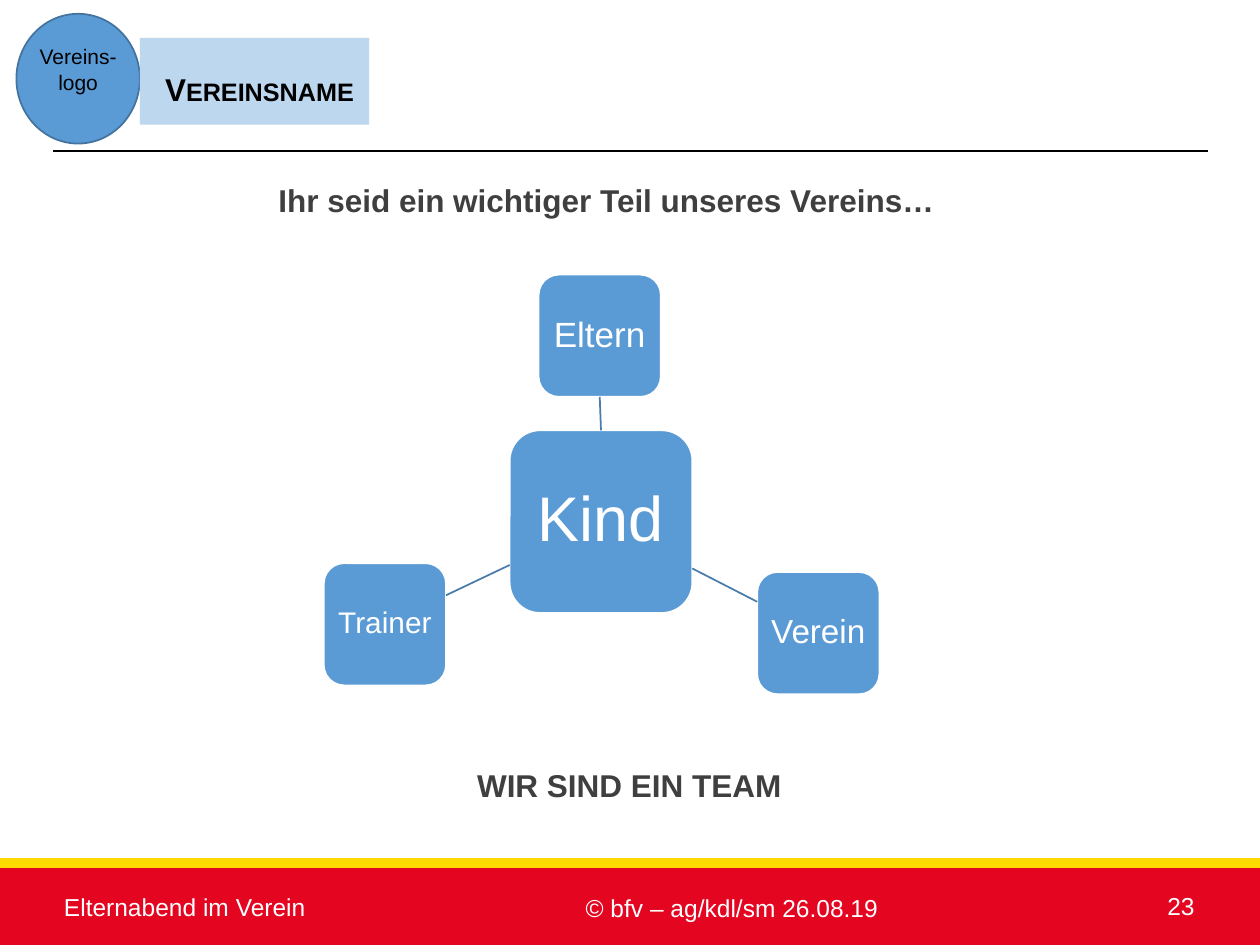
from lxml import etree
from pptx import Presentation
from pptx.dml.color import RGBColor
from pptx.enum.shapes import MSO_CONNECTOR, MSO_SHAPE
from pptx.enum.text import MSO_ANCHOR, PP_ALIGN
from pptx.oxml.ns import qn
from pptx.util import Inches, Pt

LEFT, CENTER, RIGHT = PP_ALIGN.LEFT, PP_ALIGN.CENTER, PP_ALIGN.RIGHT
TOP, MIDDLE = MSO_ANCHOR.TOP, MSO_ANCHOR.MIDDLE
RECTANGLE, ROUNDED, OVAL = MSO_SHAPE.RECTANGLE, MSO_SHAPE.ROUNDED_RECTANGLE, MSO_SHAPE.OVAL
STRAIGHT = MSO_CONNECTOR.STRAIGHT
FONT = "Arial"
COLORS = {
    "blue": "5B9BD5",
    "blue_edge": "43739E",
    "spoke": "497CAB",
    "light_blue": "BDD7EE",
    "yellow": "FFDA00",
    "red": "E40521",
    "black": "000000",
    "gray": "3F3F3F",
    "white": "FFFFFF",
}


def color(name):
    return RGBColor.from_string(COLORS[name])


def write(shape, text, size, color_name, align=LEFT, bold=False, anchor=TOP):
    frame = shape.text_frame
    frame.word_wrap = True
    frame.vertical_anchor = anchor
    paragraph = frame.paragraphs[0]
    paragraph.text = text
    paragraph.alignment = align
    paragraph.font.name = FONT
    paragraph.font.size = Pt(size)
    paragraph.font.bold = bold
    paragraph.font.color.rgb = color(color_name)
    return paragraph


def add_text(slide, box, *text_format, **options):
    shape = slide.shapes.add_textbox(*map(Inches, box))
    write(shape, *text_format, **options)


def add_block(slide, kind, box, fill, line=None):
    shape = slide.shapes.add_shape(kind, *map(Inches, box))
    shape.shadow.inherit = False
    shape.fill.solid()
    shape.fill.fore_color.rgb = color(fill)
    if line:
        shape.line.color.rgb = color(line)
        shape.line.width = Pt(1)
    else:
        shape.line.fill.background()
    return shape


def add_line(slide, start, end, color_name):
    line = slide.shapes.add_connector(STRAIGHT, *map(Inches, (*start, *end)))
    line.line.color.rgb = color(color_name)
    line.line.width = Pt(1)
    etree.SubElement(line._element.spPr, qn("a:effectLst"))
    return line


def add_header(slide, box):
    left, top, width, height = box
    logo_width = 0.98
    add_block(slide, OVAL, (left, top, logo_width, 1.03), "blue", "blue_edge")
    add_text(slide, (left, top + 0.19, logo_width, 0.5), "Vereins-logo", 12, "black", align=CENTER)
    name = add_block(slide, RECTANGLE, (left + logo_width, top + 0.19, 1.82, 0.69), "light_blue")
    paragraph = write(name, "Vereinsname", 18, "black", bold=True, anchor=MIDDLE)
    paragraph.runs[0]._r.get_or_add_rPr().set("cap", "small")
    name.text_frame.margin_left = Inches(0.2)
    name.text_frame.margin_right = 0
    name.text_frame.margin_top = Inches(0.17)
    rule_y = top + height
    add_line(slide, (0.42, rule_y), (left + width, rule_y), "black")


def add_title(slide, box):
    title = slide.shapes.title
    title.left, title.top, title.width, title.height = map(Inches, box)
    write(title, "Ihr seid ein wichtiger Teil unseres Vereins…", 18, "gray", bold=True)


def add_node(slide, center, side, text, size, inset):
    x, y = center
    node = add_block(slide, ROUNDED, (x - side / 2, y - side / 2, side, side), "blue", "white")
    paragraph = write(node, text, size, "white", align=CENTER, anchor=MIDDLE)
    paragraph.line_spacing = 0.9
    frame = node.text_frame
    frame.margin_left = frame.margin_right = Inches(inset)
    frame.margin_top = frame.margin_bottom = Inches(inset)
    return node


def add_team_diagram(slide, box):
    left, top, width, height = box
    hub_side, node_side = 1.45, 0.97
    hub_x, hub_y = left + 2.2, top + 1.96
    hub = add_node(slide, (hub_x, hub_y), hub_side, "Kind", 36, 0.1)
    half = node_side / 2
    partners = [
        ("Eltern", 20, hub_x - 0.01, top + half),
        ("Verein", 19, left + width - half, top + height - half),
        ("Trainer", 17, left + half, top + height - half - 0.07),
    ]
    for text, size, x, y in partners:
        node = add_node(slide, (x, y), node_side, text, size, 0.05)
        dx, dy = x - hub_x, y - hub_y
        reach = max(abs(dx), abs(dy))
        near, far = hub_side / 2 / reach, 1 - half / reach
        start = (hub_x + dx * near, hub_y + dy * near)
        end = (hub_x + dx * far, hub_y + dy * far)
        spoke = add_line(slide, start, end, "spoke")
        if abs(dy) > abs(dx):
            spoke.begin_connect(hub, 0)
            spoke.end_connect(node, 2)


def add_footer(slide, box):
    left, top, width, height = box
    add_block(slide, RECTANGLE, (left, top, width, 0.1), "yellow", "yellow")
    add_block(slide, RECTANGLE, (left, top + 0.08, width, height - 0.08), "red", "red")
    add_text(slide, (left + 0.41, top + 0.21, 4.1, 0.4), "Elternabend im Verein", 14, "white")
    add_text(slide, (left + 4.55, top + 0.22, 2.8, 0.35), "© bfv – ag/kdl/sm 26.08.19", 14, "white")
    add_text(slide, (left + 7.62, top + 0.2, 1.96, 0.4), "23", 14, "white", align=RIGHT)


def main():
    presentation = Presentation()
    presentation.slide_width = Inches(10)
    presentation.slide_height = Inches(7.5)
    slide = presentation.slides.add_slide(presentation.slide_layouts[5])
    add_footer(slide, (0, 6.82, 10, 0.68))
    add_header(slide, (0.13, 0.11, 9.46, 1.09))
    add_title(slide, (2.11, 1.39, 6, 0.4))
    add_team_diagram(slide, (2.57, 2.18, 4.41, 3.33))
    add_text(slide, (0.23, 6.03, 9.53, 0.4), "WIR SIND EIN TEAM", 18, "gray", align=CENTER, bold=True)
    presentation.save("out.pptx")


if __name__ == "__main__":
    main()
